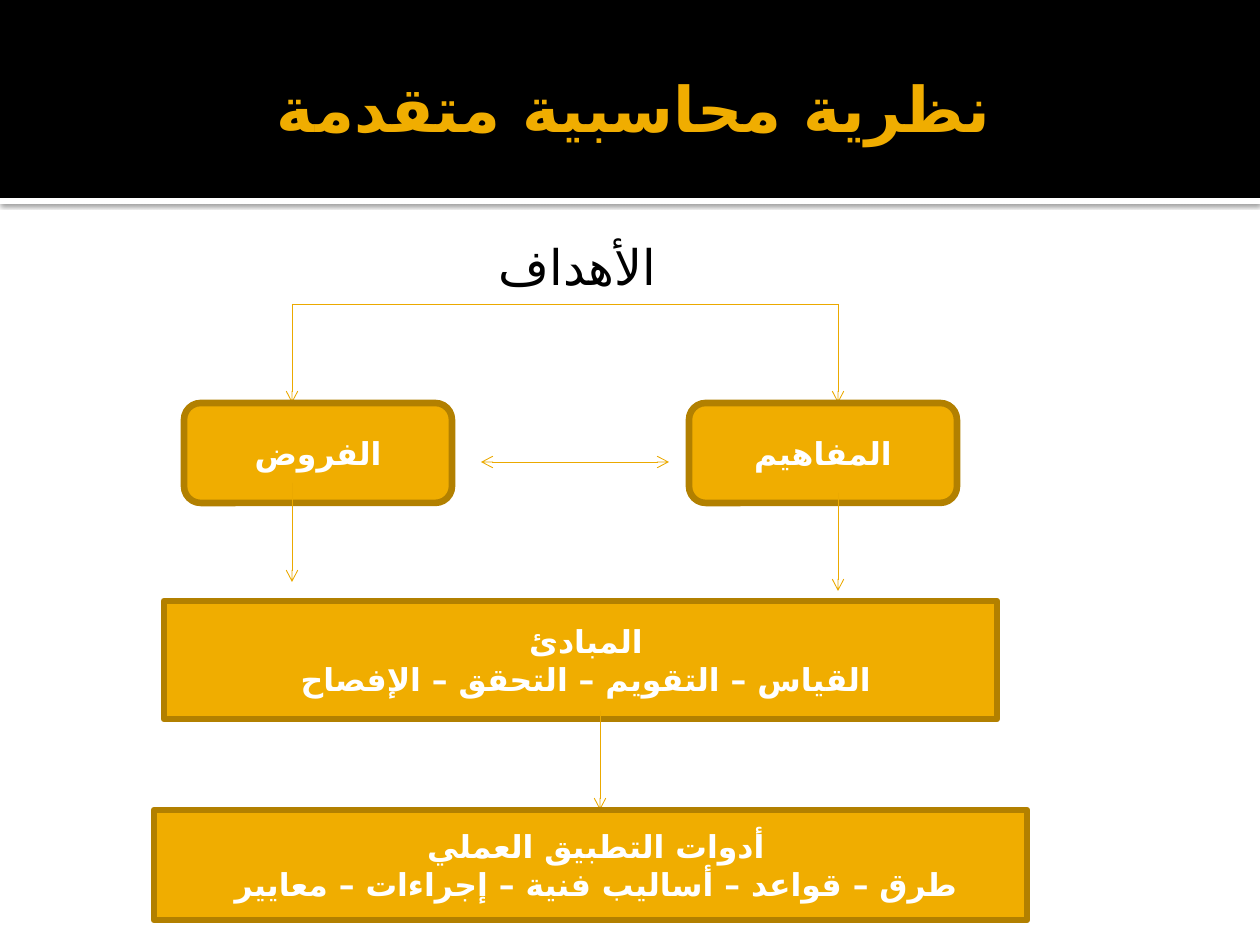
from lxml import etree
from pptx import Presentation
from pptx import util as u
from pptx.dml.color import RGBColor
from pptx.enum import shapes, text
from pptx.oxml import parse_xml
from pptx.oxml.ns import nsdecls, qn

PX_PER_INCH = 126
ARABIC_FONT = "DejaVu Sans"
COLORS = {
    "band": "000000",
    "paper": "FFFFFF",
    "gold": "F0AD00",
    "border": "B28000",
    "arrow": "EBA900",
    "ink": "000000",
}


def px(length):
    return u.Emu(round(length * 914400 / PX_PER_INCH))


def color(name):
    return RGBColor.from_string(COLORS[name])


def write_rtl(frame, lines, size, font_color, font_name, bold=False):
    """Fill a text frame with centred right-to-left paragraphs."""
    frame.word_wrap = True
    frame.auto_size = text.MSO_AUTO_SIZE.NONE
    for index, line in enumerate(lines):
        paragraph = frame.add_paragraph() if index else frame.paragraphs[0]
        paragraph.text = line
        paragraph.alignment = text.PP_ALIGN.CENTER
        paragraph._p.get_or_add_pPr().set("rtl", "1")
        font = paragraph.font
        font.size, font.bold, font.name = u.Pt(size), bold, font_name
        font.color.rgb = color(font_color)
        etree.SubElement(font._element, qn("a:cs"), typeface=ARABIC_FONT)


def set_insets(frame, left, top, right, bottom):
    frame.margin_left, frame.margin_top = px(left), px(top)
    frame.margin_right, frame.margin_bottom = px(right), px(bottom)


def add_plain_shape(slide, kind, box, fill):
    shape = slide.shapes.add_shape(kind, *map(px, box))
    shape.shadow.inherit = False
    shape.fill.solid()
    shape.fill.fore_color.rgb = color(fill)
    shape.line.fill.background()
    return shape


def add_header(slide, box, title_text):
    """Black band with a shadowed white strip below it and the title on top."""
    left, top, width, height = box
    rectangle = shapes.MSO_SHAPE.RECTANGLE
    strip = add_plain_shape(slide, rectangle, (left, top + height, width, 6), "paper")
    effects = strip._element.spPr.find(qn("a:effectLst"))
    effects.append(parse_xml(
        f'<a:outerShdw {nsdecls("a")} blurRad="31750" dist="10160" dir="5400000" '
        'algn="t" rotWithShape="0"><a:srgbClr val="000000">'
        '<a:alpha val="60000"/></a:srgbClr></a:outerShdw>'))
    add_plain_shape(slide, rectangle, box, "band")

    title = slide.shapes.title
    slide.shapes._spTree.append(title._element)
    title.left, title.top = px(left + 63), px(top + 21)
    title.width, title.height = px(width - 126), px(height - 25)
    frame = title.text_frame
    frame.vertical_anchor = text.MSO_ANCHOR.MIDDLE
    set_insets(frame, 13, 6, 6, 6)
    write_rtl(frame, [title_text], 36, "gold", "Calibri", bold=True)


def add_goal(slide, box, goal):
    frame = slide.shapes.add_textbox(*map(px, box)).text_frame
    set_insets(frame, 8, 13, 13, 6)
    properties = frame.paragraphs[0]._p.get_or_add_pPr()
    properties.set("marL", str(px(60)))
    properties.set("indent", str(px(-44)))
    write_rtl(frame, [goal], 28, "ink", "Calibri")


def add_node(slide, box, lines, kind=shapes.MSO_SHAPE.ROUNDED_RECTANGLE, rounding=None):
    node = add_plain_shape(slide, kind, box, "gold")
    if rounding is not None:
        node.adjustments[0] = rounding
    node.line.color.rgb = color("border")
    node.line.width = u.Pt(3.78)
    node.text_frame.vertical_anchor = text.MSO_ANCHOR.MIDDLE
    write_rtl(node.text_frame, lines, 18, "paper", "Cabin", bold=True)


def add_line(slide, start, end, *arrow_ends):
    """Straight line; arrow_ends names headEnd (at start) or tailEnd (at end)."""
    line = slide.shapes.add_connector(
        shapes.MSO_CONNECTOR.STRAIGHT, *map(px, (*start, *end)))
    line.line.color.rgb = color("arrow")
    line.line.width = u.Pt(0.5)
    for name in arrow_ends:
        etree.SubElement(line.line._ln, qn(f"a:{name}"), type="arrow")
    etree.SubElement(line._element.spPr, qn("a:effectLst"))


def add_diagram(slide, box):
    """Goal, two linked branches, principles and tools, from top to bottom."""
    left, top, width, height = box
    add_goal(slide, box, "الأهداف")

    rail, branch_top = top + 80, top + 179
    branches = [
        ("المفاهيم", 689, 838, 269, 367),
        ("الفروض", 184, 292, 259, 358),
    ]
    add_line(slide, (left + 292, rail), (left + 838, rail))
    for label, node_x, arrow_x, exit_y, end_y in branches:
        x = left + arrow_x
        add_line(slide, (x, rail), (x, branch_top), "tailEnd")
        add_node(slide, (left + node_x, branch_top, 268, 100), [label])
        add_line(slide, (x, top + exit_y), (x, top + end_y), "tailEnd")
    add_line(slide, (left + 669, top + 238), (left + 481, top + 238),
             "headEnd", "tailEnd")

    add_node(slide, (left + 164, top + 377, 833, 118),
             ["المبادئ ", "القياس – التقويم – التحقق – الإفصاح "],
             shapes.MSO_SHAPE.RECTANGLE)
    add_line(slide, (left + 600, top + 487), (left + 600, top + 586), "tailEnd")
    add_node(slide, (left + 154, top + 586, 873, 110),
             ["أدوات التطبيق العملي ",
              "طرق – قواعد – أساليب فنية – إجراءات – معايير "],
             rounding=0)


def main():
    presentation = Presentation()
    presentation.slide_width, presentation.slide_height = px(1260), px(945)
    slide = presentation.slides.add_slide(presentation.slide_layouts[5])
    slide.background.fill.solid()
    slide.background.fill.fore_color.rgb = color("paper")
    add_header(slide, (0, 0, 1260, 198), "نظرية محاسبية متقدمة")
    add_diagram(slide, (0, 224, 1176, 721))
    presentation.save("out.pptx")


if __name__ == "__main__":
    main()
